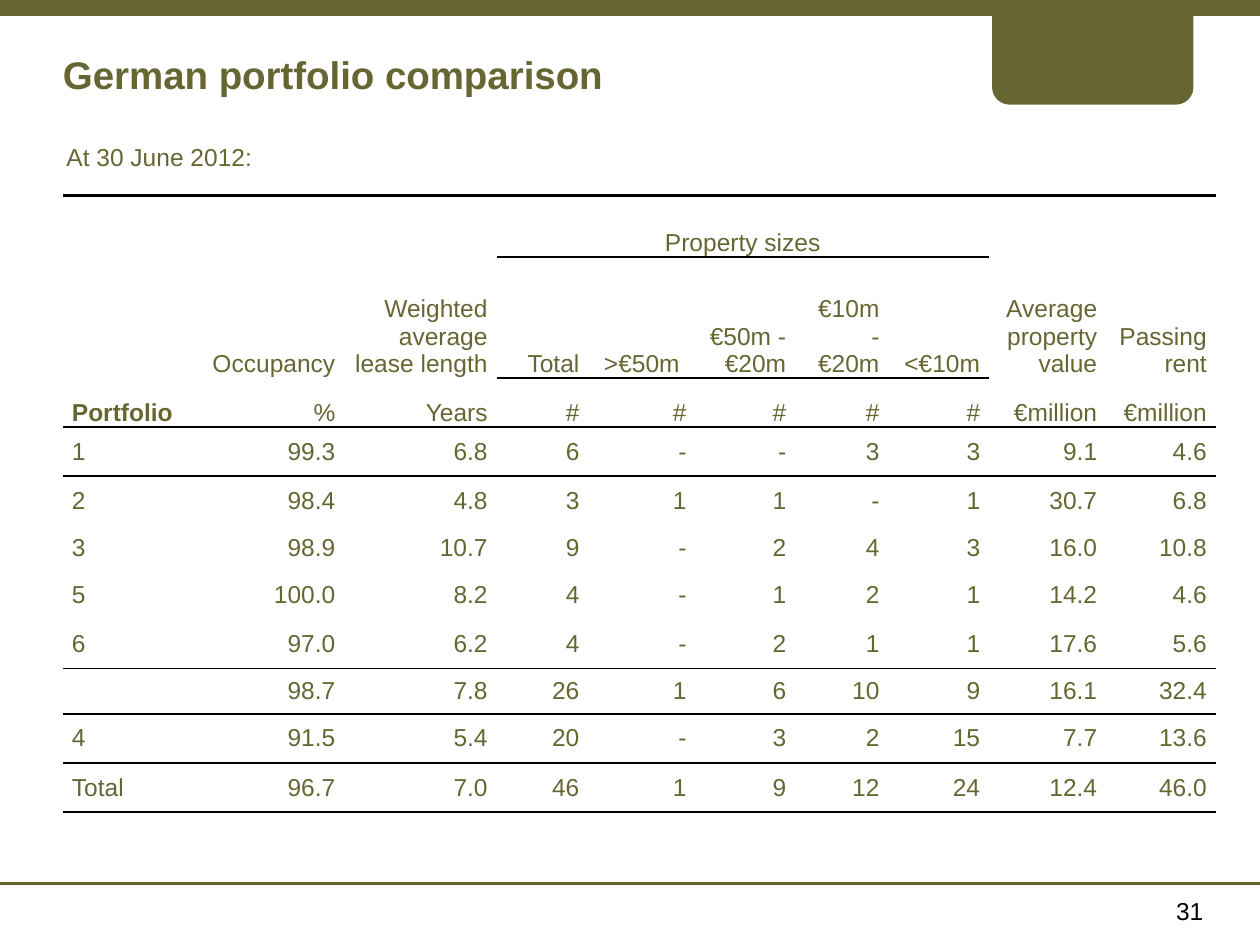
"""Build the German portfolio comparison slide."""
from lxml import etree
from pptx import Presentation
from pptx.dml.color import RGBColor
from pptx.enum.shapes import MSO_CONNECTOR, MSO_SHAPE
from pptx.enum.text import MSO_ANCHOR, PP_ALIGN
from pptx.oxml.ns import qn
from pptx.util import Cm, Pt

LEFT, RIGHT, MID, EVEN = PP_ALIGN.LEFT, PP_ALIGN.RIGHT, PP_ALIGN.CENTER, PP_ALIGN.JUSTIFY
TOP, CENTRE, BASE = MSO_ANCHOR.TOP, MSO_ANCHOR.MIDDLE, MSO_ANCHOR.BOTTOM
OLIVE, BLACK = "666633", "000000"
PLAIN = "{2D5ABB26-0587-4C30-8999-92F81FD0307C}"
WIDE, HIGH = 25.4, 19.05

BARS = [(17.81, 2), (0.15, 10)]
TEXTS = [
    ("31", (21.08, 17.93, 3.43, 0.91), (0.25, 0.13, 0.25, 0.13), TOP, RIGHT, 14, BLACK, False),
    ("German portfolio comparison", (1.27, 0.76, 18.44, 1.47), (0, 0, 0.1, 0),
     CENTRE, LEFT, 22, OLIVE, True),
    ("At 30 June 2012:", (1.19, 2.72, 4.52, 1.19), (0.15, 0.15, 0.25, 0.15),
     TOP, EVEN, 14, OLIVE, False),
]
ROWS = [
    ["", "", "", "Property sizes", "", "", "", "", "", ""],
    ["", "Occupancy", "Weighted average lease length", "Total", ">€50m ",
     "€50m - €20m", "€10m - €20m", "<€10m", "Average property value", "Passing rent"],
    ["Portfolio", "%", "Years", "#", "#", "#", "#", "#", "€million", "€million"],
    ["1", "99.3", "6.8", "6", "-", "-", "3", "3", "9.1", "4.6"],
    ["2", "98.4", "4.8", "3", "1", "1", "-", "1", "30.7", "6.8"],
    ["3", "98.9", "10.7", "9", "-", "2", "4", "3", "16.0", "10.8"],
    ["5", "100.0", "8.2", "4", "-", "1", "2", "1", "14.2", "4.6"],
    ["6", "97.0", "6.2", "4", "-", "2", "1", "1", "17.6", "5.6"],
    ["", "98.7", "7.8", "26", "1", "6", "10", "9", "16.1", "32.4"],
    ["4", "91.5", "5.4", "20", "-", "3", "2", "15", "7.7", "13.6"],
    ["Total", "96.7", "7.0", "46", "1", "9", "12", "24", "12.4", "46.0"],
]
WIDTHS = [2.72, 2.95, 3.07, 1.85, 2.16, 2.01, 1.88, 2.03, 2.36, 2.21]
HEIGHTS = [1.24, 2.44, 0.99, 0.99, 0.99, 0.91, 0.99, 0.99, 0.91, 0.99, 0.99]
SIZES = (3, 7)
HEADS = 3
RULES = {0: 1.5, 1: 1, 3: 1.5, 8: 1, 10: 1, 11: 1.5}


def hue(code):
    return RGBColor.from_string(code)


def style(para, align, size, code, bold):
    para.alignment = align
    for run in para.runs:
        font = run.font
        font.name, font.size, font.bold = "Arial", Pt(size), bold
        font.color.rgb = hue(code)


def inset(item, sides):
    item.margin_left, item.margin_top, item.margin_right, item.margin_bottom = map(Cm, sides)


def add_bar(slide, y, width):
    bar = slide.shapes.add_connector(MSO_CONNECTOR.STRAIGHT, 0, Cm(y), Cm(WIDE), Cm(y))
    bar.line.color.rgb = hue(OLIVE)
    bar.line.width = Pt(width)
    etree.SubElement(bar._element.spPr, qn("a:effectLst"))


def add_tab(slide):
    tab = slide.shapes.add_shape(MSO_SHAPE.ROUNDED_RECTANGLE, Cm(20), 0, Cm(4.06), Cm(2.11))
    tab.shadow.inherit = False
    tab.fill.solid()
    tab.fill.fore_color.rgb = hue(OLIVE)
    tab.line.fill.background()


def add_text(slide, text, place, sides, anchor, *look):
    frame = slide.shapes.add_textbox(*map(Cm, place)).text_frame
    frame.word_wrap = True
    frame.vertical_anchor = anchor
    inset(frame, sides)
    frame.text = text
    style(frame.paragraphs[0], *look)


def add_rule(cell, tag, width, spot):
    line = etree.Element(qn(tag), w=str(Pt(width)))
    fill = etree.SubElement(line, qn("a:solidFill"))
    etree.SubElement(fill, qn("a:srgbClr"), val=BLACK)
    cell._tc.get_or_add_tcPr().insert(spot, line)


def rule_cell(cell, row, col):
    spot = 0
    for tag, edge in (("a:lnT", row), ("a:lnB", row + 1)):
        if edge in RULES and (edge != 1 or SIZES[0] <= col <= SIZES[1]):
            add_rule(cell, tag, RULES[edge], spot)
            spot += 1


def fill_cell(cell, text, row, col):
    inset(cell, (0.18, 0, 0.18, 0))
    cell.vertical_anchor = BASE if row < HEADS else CENTRE
    cell.fill.background()
    if text:
        cell.text_frame.text = text
        align = MID if row == 0 else RIGHT if col else LEFT
        style(cell.text_frame.paragraphs[0], align, 14, OLIVE, text == "Portfolio")
    rule_cell(cell, row, col)


def add_grid(slide):
    grid = slide.shapes.add_table(len(ROWS), len(WIDTHS), Cm(1.27), Cm(3.94),
                                  Cm(sum(WIDTHS)), Cm(sum(HEIGHTS))).table
    grid.first_row = grid.horz_banding = False
    grid._tbl.tblPr.find(qn("a:tableStyleId")).text = PLAIN
    for col, width in zip(grid.columns, WIDTHS):
        col.width = Cm(width)
    for row, height in zip(grid.rows, HEIGHTS):
        row.height = Cm(height)
    grid.cell(0, SIZES[0]).merge(grid.cell(0, SIZES[1]))
    for r, row in enumerate(ROWS):
        for c, text in enumerate(row):
            fill_cell(grid.cell(r, c), text, r, c)


def main():
    deck = Presentation()
    deck.slide_width, deck.slide_height = Cm(WIDE), Cm(HIGH)
    slide = deck.slides.add_slide(deck.slide_layouts[6])
    for bar in BARS:
        add_bar(slide, *bar)
    add_tab(slide)
    for item in TEXTS:
        add_text(slide, *item)
    add_grid(slide)
    deck.save("out.pptx")


if __name__ == "__main__":
    main()
